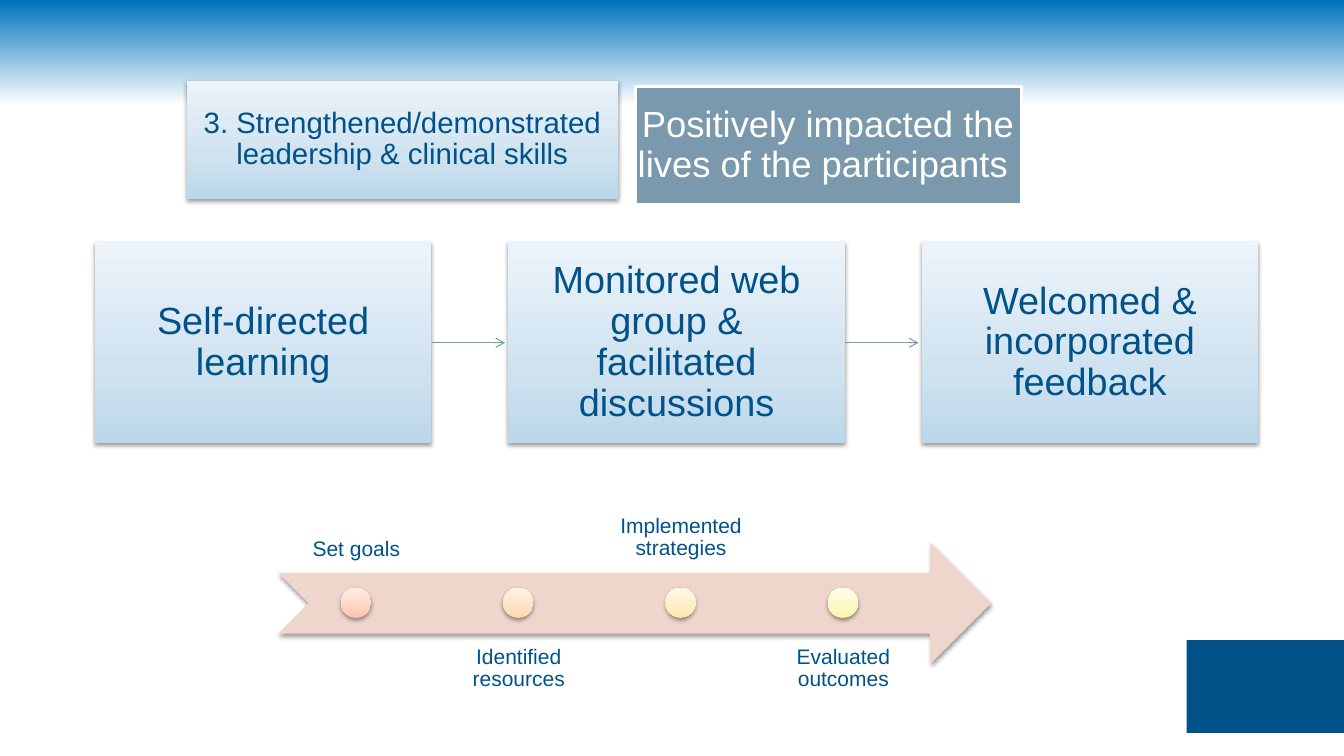
"""Builds a slide about leadership skills with a process row and a timeline arrow."""
from copy import deepcopy

from lxml import etree
from pptx import Presentation
from pptx.dml.color import RGBColor
from pptx.enum.shapes import MSO_CONNECTOR, MSO_SHAPE
from pptx.enum.text import MSO_ANCHOR, PP_ALIGN
from pptx.oxml.ns import qn
from pptx.util import Inches, Pt

RECTANGLE = MSO_SHAPE.RECTANGLE
OVAL = MSO_SHAPE.OVAL
NOTCHED_ARROW = MSO_SHAPE.NOTCHED_RIGHT_ARROW
STRAIGHT = MSO_CONNECTOR.STRAIGHT
TOP, MIDDLE, BOTTOM = MSO_ANCHOR.TOP, MSO_ANCHOR.MIDDLE, MSO_ANCHOR.BOTTOM
CENTER = PP_ALIGN.CENTER

FONT = "Arial"
COLORS = {
    "sky": "0072BC",
    "white": "FFFFFF",
    "navy": "005288",
    "slate": "7A99AC",
    "arrow": "EFD6CC",
    "shadow": "000000",
}
BOX_GRADIENT = ("BBD7EA", "CFE2F0", "ECF4FA")
GRADIENT_POSITIONS = (0, 0.35, 1)
STEPS = (
    "Self-directed learning",
    "Monitored web group & facilitated discussions",
    "Welcomed & incorporated feedback",
)
MILESTONES = (
    ("Set goals", ("FFC2A9", "FFD4C2", "FFEEE8")),
    ("Identified resources", ("FFD6AC", "FFE1C4", "FFF3E9")),
    ("Implemented strategies", ("FFE8AA", "FFEEC3", "FFF8E8")),
    ("Evaluated outcomes", ("FEF7AC", "FDF8C5", "FFFDE8")),
)


def rgb(name):
    return RGBColor.from_string(COLORS[name])


def set_gradient(fill, element, colors, positions, angle):
    fill.gradient()
    fill.gradient_angle = angle
    stop_list = element.xpath(".//a:gsLst")[0]
    while len(stop_list) < len(colors):
        stop_list.append(deepcopy(stop_list[0]))
    for stop, color, position in zip(fill.gradient_stops, colors, positions):
        stop.color.rgb = RGBColor.from_string(color)
        stop.position = position


def add_shadow(shape):
    effects = shape._element.spPr.find(qn("a:effectLst"))
    shadow = etree.SubElement(
        effects, qn("a:outerShdw"), blurRad=str(Pt(3.1)), dist=str(Pt(1.6)),
        dir="5400000", rotWithShape="0")
    color = etree.SubElement(shadow, qn("a:srgbClr"), val=COLORS["shadow"])
    etree.SubElement(color, qn("a:alpha"), val="38000")


def add_figure(slide, kind, left, top, width, height, fill, shadow=True):
    shape = slide.shapes.add_shape(
        kind, Inches(left), Inches(top), Inches(width), Inches(height))
    shape.shadow.inherit = False
    shape.line.fill.background()
    if isinstance(fill, tuple):
        set_gradient(shape.fill, shape._element, fill, GRADIENT_POSITIONS, 90)
    else:
        shape.fill.solid()
        shape.fill.fore_color.rgb = rgb(fill)
    if shadow:
        add_shadow(shape)
    return shape


def write_text(shape, text, size, inset, color="navy", anchor=MIDDLE):
    frame = shape.text_frame
    frame.text = text
    frame.word_wrap = True
    frame.vertical_anchor = anchor
    frame.margin_left = frame.margin_right = Inches(inset)
    frame.margin_top = frame.margin_bottom = Inches(inset)
    paragraph = frame.paragraphs[0]
    paragraph.alignment = CENTER
    paragraph.line_spacing = 0.9
    font = paragraph.runs[0].font
    font.name = FONT
    font.size = Pt(size)
    font.color.rgb = rgb(color)


def add_arrow(slide, left, top, length):
    connector = slide.shapes.add_connector(
        STRAIGHT, Inches(left), Inches(top), Inches(left + length), Inches(top))
    connector.line.color.rgb = rgb("slate")
    connector.line.width = Pt(0.75)
    etree.SubElement(connector.line._get_or_add_ln(), qn("a:tailEnd"), type="arrow")
    etree.SubElement(connector._element.spPr, qn("a:effectLst"))


def add_timeline(slide):
    add_figure(slide, NOTCHED_ARROW, 2.76, 5.38, 7.07, 1.21, "arrow")
    for index, (text, colors) in enumerate(MILESTONES):
        offset = 1.61 * index
        top, anchor = (6.29, TOP) if index % 2 else (4.47, BOTTOM)
        label = slide.shapes.add_textbox(
            Inches(2.77 + offset), Inches(top), Inches(1.53), Inches(1.21))
        write_text(label, text, 15, 0.12, anchor=anchor)
        add_figure(slide, OVAL, 3.38 + offset, 5.83, 0.3, 0.3, colors)


def add_process(slide):
    width, pitch = 3.34, 4.1
    for index, text in enumerate(STEPS):
        left = 0.94 + pitch * index
        box = add_figure(slide, RECTANGLE, left, 2.4, width, 2, BOX_GRADIENT)
        write_text(box, text, 27, 0.21)
        if index < len(STEPS) - 1:
            add_arrow(slide, left + width, 3.4, 0.73)


def add_headings(slide):
    impact = add_figure(slide, RECTANGLE, 6.3, 0.86, 3.83, 1.17, "slate", shadow=False)
    impact.line.color.rgb = rgb("white")
    impact.line.width = Pt(2)
    write_text(impact, "Positively impacted the lives of the participants ",
               26, 0.02, "white")
    skills = add_figure(slide, RECTANGLE, 1.85, 0.8, 4.28, 1.17, BOX_GRADIENT)
    write_text(skills, "3. Strengthened/demonstrated leadership & clinical skills",
               21, 0.01)


def main():
    presentation = Presentation()
    presentation.slide_width = Inches(13.33)
    presentation.slide_height = Inches(7.5)
    slide = presentation.slides.add_slide(presentation.slide_layouts[6])
    set_gradient(slide.background.fill, slide._element,
                 (COLORS["sky"], COLORS["white"]), (0, 0.14), 270)
    add_figure(slide, RECTANGLE, 11.77, 6.35, 1.56, 0.92, "navy", shadow=False)
    add_timeline(slide)
    add_process(slide)
    add_headings(slide)
    presentation.save("out.pptx")


if __name__ == "__main__":
    main()
